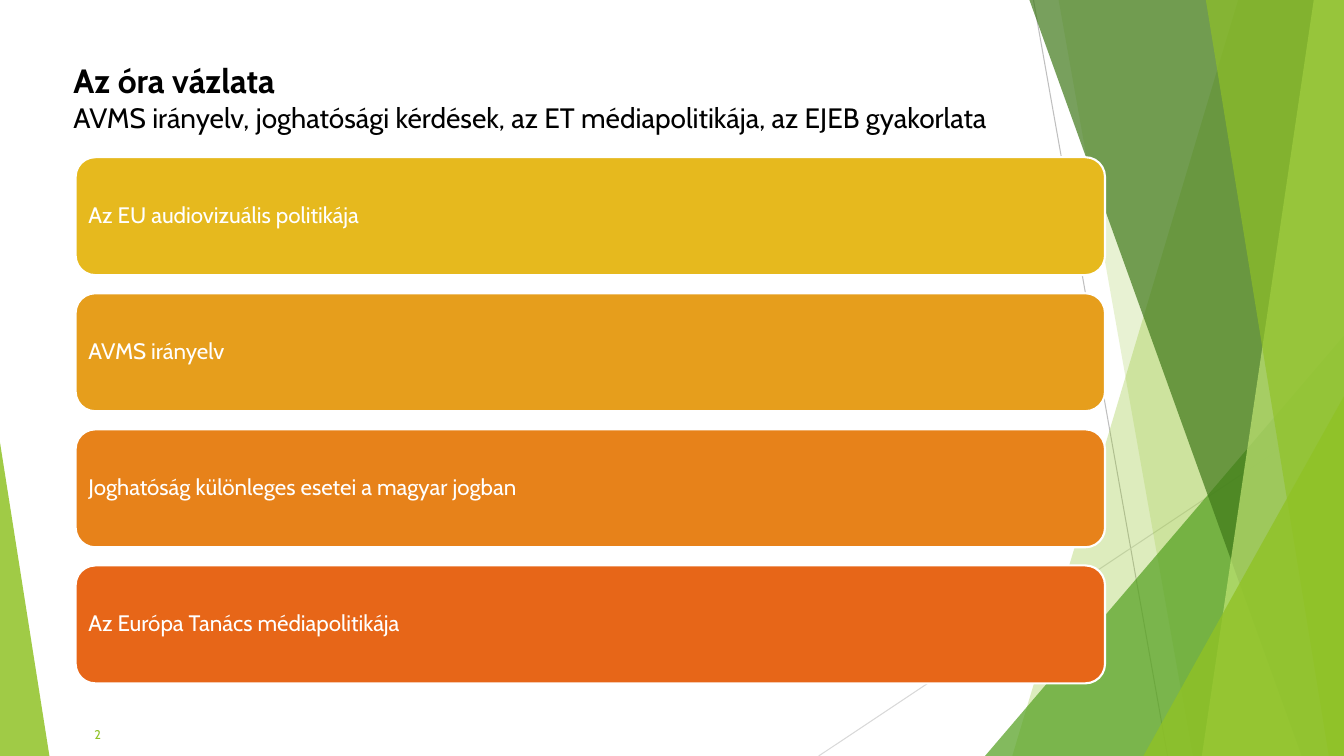
from collections import namedtuple

from lxml import etree
from pptx import Presentation
from pptx.dml.color import RGBColor
from pptx.enum.shapes import MSO_CONNECTOR, MSO_SHAPE
from pptx.enum.text import MSO_ANCHOR, PP_ALIGN
from pptx.oxml.ns import qn
from pptx.util import Pt

PX = 9144  # 100 px to the inch
FONT = "Cabin"
LINE = MSO_CONNECTOR.STRAIGHT
TRIANGLE = MSO_SHAPE.ISOSCELES_TRIANGLE
ROUNDED = MSO_SHAPE.ROUNDED_RECTANGLE
MIDDLE = MSO_ANCHOR.MIDDLE
LEFT, RIGHT = PP_ALIGN.LEFT, PP_ALIGN.RIGHT

COLORS = {
    "black": "000000",
    "white": "FFFFFF",
    "gray": "BFBFBF",
    "light gray": "D9D9D9",
    "lime": "90C226",
    "green": "54A021",
    "dark green": "3F7819",
    "pale lime": "C0E474",
    "yellow": "E6B91E",
    "amber": "E69E1C",
    "orange": "E7821A",
    "red orange": "E76618",
}

Box = namedtuple("Box", "left top width height")

TOPICS = [
    ("Az EU audiovizuális politikája", "yellow"),
    ("AVMS irányelv", "amber"),
    ("Joghatóság különleges esetei a magyar jogban", "orange"),
    ("Az Európa Tanács médiapolitikája", "red orange"),
]


def rgb(color):
    return RGBColor.from_string(COLORS[color])


def emu(box):
    return [length * PX for length in box]


def paint(shape, color, opacity=100):
    shape.shadow.inherit = False
    shape.line.fill.background()
    shape.fill.solid()
    shape.fill.fore_color.rgb = rgb(color)
    if opacity < 100:
        color_element = shape.fill._xPr.find(qn("a:solidFill"))[0]
        etree.SubElement(color_element, qn("a:alpha"), val=str(opacity * 1000))


def add_line(page, start, end, color):
    line = page.shapes.add_connector(LINE, *emu(start + end))
    line.line.color.rgb = rgb(color)
    line.line.width = Pt(0.75)
    etree.SubElement(line._element.spPr, qn("a:effectLst"))


def add_facet(page, points, color, opacity):
    start, *others = points
    builder = page.shapes.build_freeform(*start, scale=PX)
    builder.add_line_segments(others, close=True)
    paint(builder.convert_to_shape(), color, opacity)


def add_triangle(page, box, apex, color, opacity):
    """Apex is 0 for a peak on the left side and 1 for one on the right."""
    triangle = page.shapes.add_shape(TRIANGLE, *emu(box))
    triangle.adjustments[0] = apex
    paint(triangle, color, opacity)


def add_run(para, text, size, color, bold=False):
    run = para.add_run()
    run.text = text
    run.font.name = FONT
    run.font.size = Pt(size)
    run.font.bold = bold
    run.font.color.rgb = rgb(color)


def add_text_frame(page, box):
    frame = page.shapes.add_textbox(*emu(box)).text_frame
    frame.word_wrap = True
    frame.vertical_anchor = MIDDLE
    return frame


def add_backdrop(page, box):
    left, top = box.left, box.top
    right, bottom = left + box.width, top + box.height

    def add_band(upper, lower, color, opacity):
        """Fill from a slanted edge to the right side of the box."""
        points = [(left + upper, top), (right, top),
                  (right, bottom), (left + lower, bottom)]
        add_facet(page, points, color, opacity)

    def add_corner(width, height, color, opacity):
        corner = Box(right - width, bottom - height, width, height)
        add_triangle(page, corner, 1, color, opacity)

    add_line(page, (left + 1025, top), (left + 1158, bottom), "gray")
    add_line(page, (right, top + 403), (left + 812, bottom), "light gray")
    add_band(1228, 1004, "lime", 30)
    add_band(1050, 1183, "lime", 20)
    add_corner(356, 417, "green", 72)
    add_band(1021, 1291, "dark green", 70)
    add_band(1303, 1192, "pale lime", 70)
    add_band(1196, 1318, "lime", 65)
    add_corner(199, 357, "lime", 80)
    add_triangle(page, Box(left, bottom - 311, 49, 311), 0, "lime", 85)


def add_heading(page, box):
    frame = add_text_frame(page, box)
    title = frame.paragraphs[0]
    add_run(title, "Az óra vázlata", 24, "black", bold=True)
    subtitle = frame.add_paragraph()
    add_run(subtitle, "AVMS irányelv, joghatósági kérdések, az ET "
            "médiapolitikája, az EJEB gyakorlata", 20, "black")
    for para in frame.paragraphs:
        para.line_spacing = Pt(24)


def add_topics(page, box, gap=18):
    height = (box.height - gap * (len(TOPICS) - 1)) // len(TOPICS)
    for index, (text, color) in enumerate(TOPICS):
        top = box.top + index * (height + gap)
        bar = page.shapes.add_shape(
            ROUNDED, *emu((box.left, top, box.width, height)))
        paint(bar, color)
        bar.line.color.rgb = rgb("white")
        bar.line.width = Pt(1.5)
        frame = bar.text_frame
        frame.word_wrap = True
        frame.vertical_anchor = MIDDLE
        frame.margin_left = frame.margin_right = 7 * PX
        frame.margin_top = frame.margin_bottom = 7 * PX
        para = frame.paragraphs[0]
        para.alignment = LEFT
        para.line_spacing = 0.9
        add_run(para, text, 16, "white")


def add_page_number(page, box):
    para = add_text_frame(page, box).paragraphs[0]
    para.alignment = RIGHT
    add_run(para, "2", 9, "lime")


def main():
    deck = Presentation()
    slide_box = Box(0, 0, 1333, 750)
    deck.slide_width = slide_box.width * PX
    deck.slide_height = slide_box.height * PX
    page = deck.slides.add_slide(deck.slide_layouts[6])
    add_backdrop(page, slide_box)
    add_heading(page, Box(63, 60, 1207, 79))
    add_page_number(page, Box(63, 715, 47, 28))
    add_topics(page, Box(75, 156, 1021, 522))
    deck.save("out.pptx")


if __name__ == "__main__":
    main()
